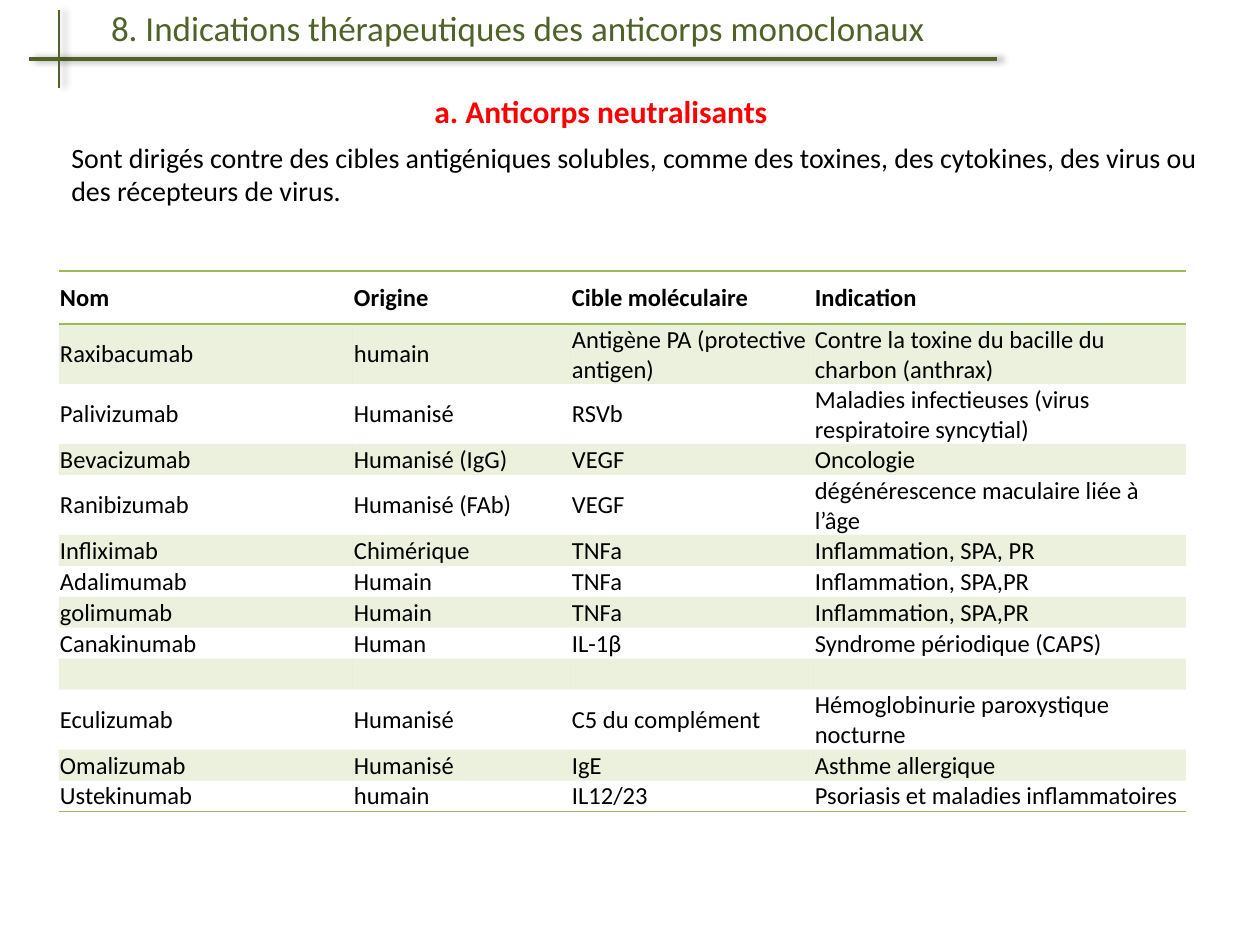
from lxml.etree import SubElement as Sub
from pptx import Presentation
from pptx.dml.color import RGBColor as RGB
from pptx.enum.shapes import MSO_CONNECTOR as Conn
from pptx.enum.text import MSO_ANCHOR as Anchor, MSO_AUTO_SIZE as Fit, PP_ALIGN as Align
from pptx.oxml.ns import qn
from pptx.util import Pt

# Content
TITLE = "8. Indications thérapeutiques des anticorps monoclonaux"
HEAD = "a. Anticorps neutralisants"
INTRO = ("Sont dirigés contre des cibles antigéniques solubles, comme des toxines, "
         "des cytokines, des virus ou des récepteurs de virus.")
COLS = ["Nom", "Origine", "Cible moléculaire", "Indication"]
# Lines of text in the row, then its cells
ROWS = [
    (2, "Raxibacumab", "humain", "Antigène PA (protective antigen)",
     "Contre la toxine du bacille du charbon (anthrax)"),
    (2, "Palivizumab", "Humanisé", "RSVb",
     "Maladies infectieuses (virus respiratoire syncytial)"),
    (1, "Bevacizumab", "Humanisé (IgG)", "VEGF", "Oncologie"),
    (2, "Ranibizumab", "Humanisé (FAb)", "VEGF", "dégénérescence maculaire liée à l’âge"),
    (1, "Infliximab", "Chimérique", "TNFa", "Inflammation, SPA, PR"),
    (1, "Adalimumab", "Humain", "TNFa", "Inflammation, SPA,PR"),
    (1, "golimumab", "Humain", "TNFa", "Inflammation, SPA,PR"),
    (1, "Canakinumab", "Human", "IL-1β", "Syndrome périodique (CAPS)"),
    (1, "", "", "", ""),
    (2, "Eculizumab", "Humanisé", "C5 du complément", "Hémoglobinurie paroxystique nocturne"),
    (1, "Omalizumab", "Humanisé", "IgE", "Asthme allergique"),
    (1, "Ustekinumab", "humain", "IL12/23", "Psoriasis et maladies inflammatoires"),
]

# Theme
THEME = {
    "font": "Calibri", "dark": "4F6228", "green": "9BBB59", "red": "FF0000",
    "black": "000000", "white": "FFFFFF",
    "title": 20, "head": 18, "intro": 16, "cell": 14,
}
PLAIN = "{2D5ABB26-0587-4C30-8999-92F81FD0307C}"  # table style without lines or fills

# Layout in px
SIZE = (1260, 945)
TABLE = (59, 271)
WIDTHS = [294, 218, 243, 372]
HEAD_H = 53
LINE_H = {1: 31, 2: 60}
RULES = [((29, 59), (997, 59), 0), ((59, 10), (59, 88), 0.9)]
INSET = {"margin_left": 1, "margin_right": 1, "margin_top": 1, "margin_bottom": 0}


def px(n):
    return round(n * 914400 / 126)


def color(name):
    return RGB.from_string(THEME[name])


def write(para, text, size, ink, bold=False):
    run = para.add_run()
    run.text = text
    look = {"name": THEME["font"], "size": Pt(THEME[size]), "bold": bold}
    for key, val in look.items():
        setattr(run.font, key, val)
    run.font.color.rgb = color(ink)


def add_text(box, text, size, ink, bold=False, align=Align.LEFT, wrap=True):
    frame = slide.shapes.add_textbox(*map(px, box)).text_frame
    frame.word_wrap = wrap
    frame.auto_size = Fit.SHAPE_TO_FIT_TEXT
    para = frame.paragraphs[0]
    para.alignment = align
    write(para, text, size, ink, bold)


def add_rule(start, end, width):
    rule = slide.shapes.add_connector(Conn.STRAIGHT, *map(px, start + end))
    rule.line.color.rgb = color("dark")
    rule.line.width = Pt(width)
    fx = Sub(rule._element.spPr, qn("a:effectLst"))
    shade = Sub(fx, qn("a:outerShdw"), blurRad=str(Pt(4)), dist=str(Pt(3)), dir="0")
    ink = Sub(shade, qn("a:srgbClr"), val=THEME["black"])
    Sub(ink, qn("a:alpha"), val="40000")


def add_edge(cell, tag):
    edge = Sub(cell._tc.get_or_add_tcPr(), qn("a:" + tag), w=str(Pt(1)))
    Sub(Sub(edge, qn("a:solidFill")), qn("a:srgbClr"), val=THEME["green"])


def fill_cell(cell, text, edges, band, bold):
    for tag in edges:
        add_edge(cell, tag)
    for key, val in INSET.items():
        setattr(cell, key, px(val))
    cell.vertical_anchor = Anchor.MIDDLE
    if band:
        cell.fill.solid()
        cell.fill.fore_color.rgb = color("green")
        tint = cell._tc.tcPr.find(".//" + qn("a:srgbClr"))
        Sub(tint, qn("a:alpha"), val="20000")
    else:
        cell.fill.background()
    para = cell.text_frame.paragraphs[0]
    if text:
        write(para, text, "cell", "black", bold)
    else:
        Sub(para._p, qn("a:endParaRPr"), sz=str(THEME["cell"] * 100))


def add_grid():
    tall = [HEAD_H] + [LINE_H[row[0]] for row in ROWS]
    box = TABLE + (sum(WIDTHS), sum(tall))
    grid = slide.shapes.add_table(len(tall), len(COLS), *map(px, box)).table
    grid.first_row = grid.horz_banding = False
    grid._tbl.tblPr.find(qn("a:tableStyleId")).text = PLAIN
    for col, wide in zip(grid.columns, WIDTHS):
        col.width = px(wide)
    for r, cells in enumerate([COLS] + [row[1:] for row in ROWS]):
        grid.rows[r].height = px(tall[r])
        edges = ["lnT", "lnB"] if r == 0 else ["lnB"] if r == len(ROWS) else []
        for c, text in enumerate(cells):
            fill_cell(grid.cell(r, c), text, edges, r % 2 == 1, r == 0)


# Slide
prs = Presentation()
prs.slide_width, prs.slide_height = map(px, SIZE)
slide = prs.slides.add_slide(prs.slide_layouts[6])
slide.background.fill.solid()
slide.background.fill.fore_color.rgb = color("white")

# Title with its crossing rules
add_text((39, 0, 958, 55), TITLE, "title", "dark", align=Align.CENTER)
for rule in RULES:
    add_rule(*rule)

# Heading, introduction and table
add_text((422, 86, 360, 50), HEAD, "head", "red", bold=True, wrap=False)
add_text((59, 134, 1157, 81), INTRO, "intro", "black")
add_grid()

prs.save("out.pptx")
